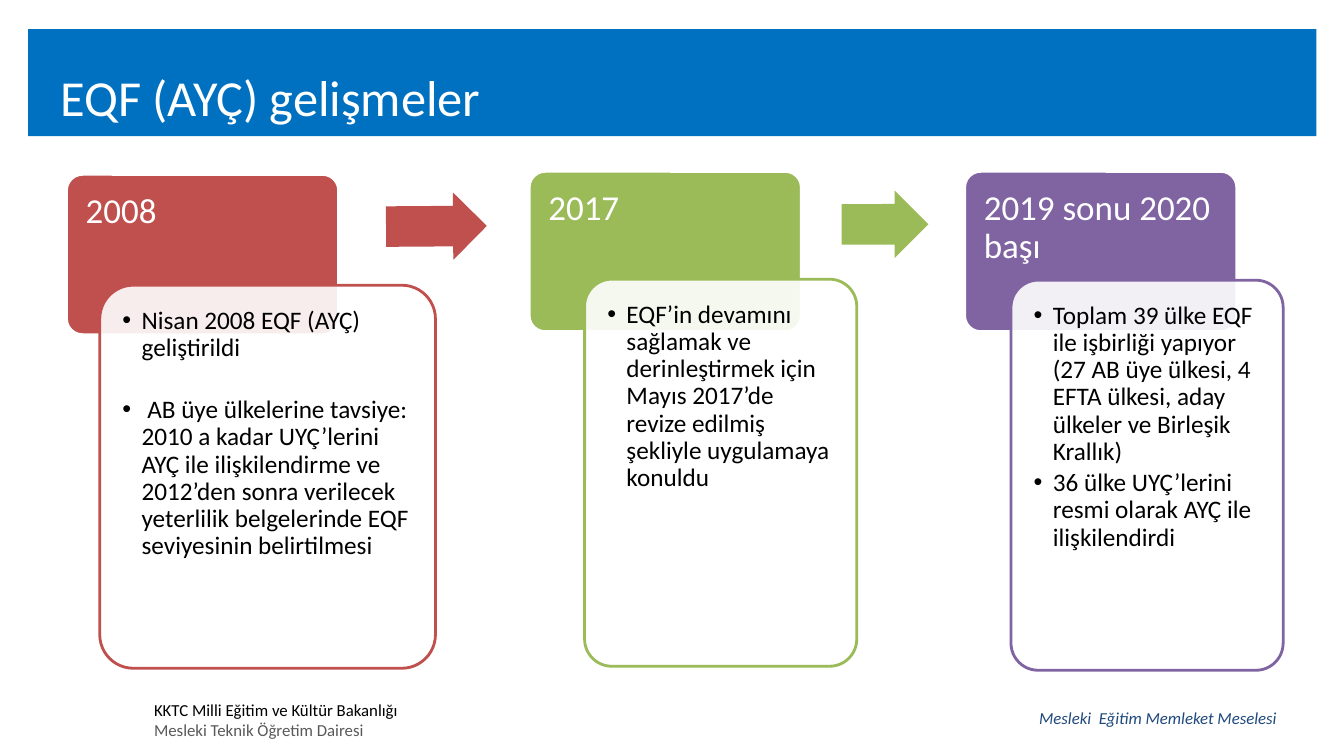
from dataclasses import dataclass

from lxml.etree import SubElement
from pptx import Presentation
from pptx.dml.color import RGBColor
from pptx.enum.shapes import MSO_SHAPE as Preset
from pptx.enum.text import MSO_ANCHOR as Anchor, MSO_AUTO_SIZE as AutoSize, PP_ALIGN as Align
from pptx.oxml.ns import qn
from pptx.util import Inches, Pt

CELL = Inches(0.1)
COLUMNS, ROWS = 133.33, 75


@dataclass(frozen=True)
class Theme:
    font: str = "Calibri"
    band: str = "0070C0"
    white: str = "FFFFFF"
    ink: str = "000000"
    grey: str = "595959"
    navy: str = "1F497D"
    red: str = "C0504D"
    green: str = "9BBB59"
    purple: str = "8064A2"
    title_size: int = 36
    year_size: int = 25
    body_size: int = 18
    footer_size: int = 12
    outline: int = 2


THEME = Theme()


@dataclass(frozen=True)
class Box:
    left: float
    top: float
    width: float
    height: float

    def within(self, left, top, width, height):
        return Box(self.left + left, self.top + top, width, height)

    def inset(self, across, down):
        return self.within(across, down, self.width - 2 * across, self.height - 2 * down)

    def emu(self):
        return [round(cells * CELL) for cells in (self.left, self.top, self.width, self.height)]


@dataclass(frozen=True)
class Stage:
    year: str
    notes: tuple
    color: str
    card: Box
    panel: Box


@dataclass(frozen=True)
class Step:
    box: Box
    turn: float
    color: str


def apply(target, formats):
    for key, value in formats.items():
        setattr(target, key, value)


def style(paragraph, size, color, italic=False):
    apply(paragraph.font, {"name": THEME.font, "size": Pt(size), "italic": italic})
    paragraph.font.color.rgb = RGBColor.from_string(color)


def add_block(slide, preset, box, fill, outline=None, round_to=None):
    block = slide.shapes.add_shape(preset, *box.emu())
    block.shadow.inherit = False
    block.fill.solid()
    block.fill.fore_color.rgb = RGBColor.from_string(fill)
    if outline:
        block.line.color.rgb = RGBColor.from_string(outline)
        block.line.width = Pt(THEME.outline)
    else:
        block.line.fill.background()
    if round_to:
        block.adjustments[0] = round_to
    return block


def add_text(slide, box, formats):
    frame = slide.shapes.add_textbox(*box.emu()).text_frame
    apply(frame, {"word_wrap": True, **formats})
    return frame


def add_paragraph(frame, index, text):
    paragraph = frame.add_paragraph() if index else frame.paragraphs[0]
    paragraph.text = text
    return paragraph


def set_bullet(paragraph):
    properties = paragraph._p.get_or_add_pPr()
    indents = {"marL": Inches(0.19), "indent": -Inches(0.19)}
    for key, value in indents.items():
        properties.set(key, str(value))
    SubElement(properties, qn("a:buFont")).set("typeface", "Arial")
    SubElement(properties, qn("a:buChar")).set("char", "•")


def build_header(slide, box, text):
    band = add_block(slide, Preset.RECTANGLE, box, THEME.band)
    title = slide.shapes.title
    band._element.addnext(title._element)
    place = box.within(2.2, 3.2, 121.8, 7)
    apply(title, dict(zip(("left", "top", "width", "height"), place.emu())))
    title.text = text
    apply(title.text_frame, {"vertical_anchor": Anchor.MIDDLE, "auto_size": AutoSize.NONE})
    paragraph = title.text_frame.paragraphs[0]
    paragraph.alignment = Align.LEFT
    style(paragraph, THEME.title_size, THEME.white)


def build_footer(slide, box, lines, italic=False):
    frame = add_text(slide, box, {"auto_size": AutoSize.SHAPE_TO_FIT_TEXT})
    for index, (text, color) in enumerate(lines):
        style(add_paragraph(frame, index, text), THEME.footer_size, color, italic)


def build_card(slide, box, year, color):
    add_block(slide, Preset.ROUNDED_RECTANGLE, box, color, THEME.white, 0.1)
    wide, narrow = Inches(0.19), Inches(0.1)
    frame = add_text(slide, box.within(0, 0, box.width, box.height * 2 / 3), {
        "margin_left": wide, "margin_top": wide, "margin_right": wide, "margin_bottom": narrow})
    heading = add_paragraph(frame, 0, year)
    heading.line_spacing = 0.9
    style(heading, THEME.year_size, THEME.white)


def build_panel(slide, box, notes, color):
    panel = add_block(slide, Preset.ROUNDED_RECTANGLE, box, THEME.white, color, 0.1)
    tint = panel._element.spPr.find(qn("a:solidFill"))[0]
    SubElement(tint, qn("a:alpha")).set("val", "90000")
    sides = ("margin_left", "margin_top", "margin_right", "margin_bottom")
    frame = add_text(slide, box.inset(0.85, 0.8), dict.fromkeys(sides, Inches(0.14)))
    for index, (text, gap) in enumerate(notes):
        note = add_paragraph(frame, index, text)
        set_bullet(note)
        apply(note, {"level": 1, "line_spacing": 0.9, "space_after": Pt(3)})
        if gap:
            note.space_before = Pt(gap)
        style(note, THEME.body_size, THEME.ink)


def build_stage(slide, stage):
    build_card(slide, stage.card, stage.year, stage.color)
    build_panel(slide, stage.panel, stage.notes, stage.color)


def build_step(slide, step):
    arrow = add_block(slide, Preset.RIGHT_ARROW, step.box, step.color, round_to=0.6)
    arrow.rotation = step.turn


def card_at(left, top):
    return Box(left, top, 27, 15.9)


STAGES = (
    Stage("2008", (
        ("Nisan 2008 EQF (AYÇ) geliştirildi", 0),
        (" AB üye ülkelerine tavsiye: 2010 a kadar UYÇ’lerini AYÇ ile ilişkilendirme ve "
         "2012’den sonra verilecek yeterlilik belgelerinde EQF seviyesinin belirtilmesi", 22),
    ), THEME.red, card_at(6.6, 17.3), Box(9.9, 28.3, 33.3, 38)),
    Stage("2017", (
        ("EQF’in devamını sağlamak ve derinleştirmek için Mayıs 2017’de revize edilmiş "
         "şekliyle uygulamaya konuldu", 0),
    ), THEME.green, card_at(52.5, 17), Box(58, 27.7, 27, 38.4)),
    Stage("2019 sonu 2020 başı", (
        ("Toplam 39 ülke EQF ile işbirliği yapıyor (27 AB üye ülkesi, 4 EFTA ülkesi, "
         "aday ülkeler ve Birleşik Krallık)", 0),
        ("36 ülke UYÇ’lerini resmi olarak AYÇ ile ilişkilendirdi", 0),
    ), THEME.purple, card_at(95.7, 17), Box(100.3, 27.8, 27, 38.7)),
)
STEPS = (
    Step(Box(38.3, 19.1, 10, 6.7), 359.6, THEME.red),
    Step(Box(83.5, 18.9, 8.6, 6.7), 359.9, THEME.green),
)


def main():
    deck = Presentation()
    apply(deck, {"slide_width": round(COLUMNS * CELL), "slide_height": ROWS * CELL})
    slide = deck.slides.add_slide(deck.slide_layouts[5])
    build_header(slide, Box(2.8, 2.9, 127.8, 10.6), "EQF (AYÇ) gelişmeler")
    build_footer(slide, Box(14.3, 68.9, 37.9, 5), (
        ("KKTC Milli Eğitim ve Kültür Bakanlığı", THEME.ink),
        ("Mesleki Teknik Öğretim Dairesi", THEME.grey)))
    build_footer(slide, Box(102.1, 69.7, 27.6, 3),
                 (("Mesleki  Eğitim Memleket Meselesi", THEME.navy),), italic=True)
    for stage in STAGES:
        build_stage(slide, stage)
    for step in STEPS:
        build_step(slide, step)
    deck.save("out.pptx")


if __name__ == "__main__":
    main()
